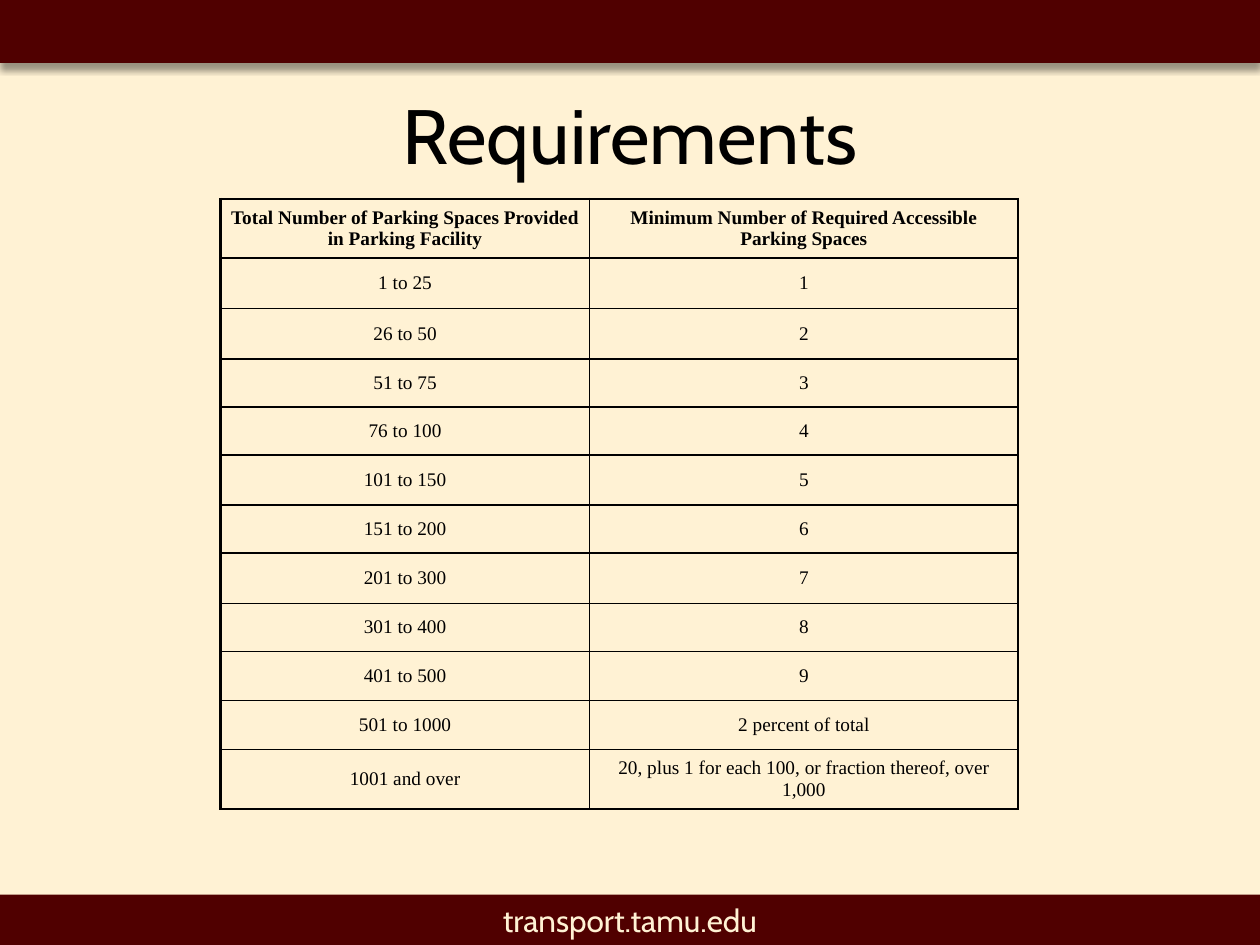
"""Build the accessible parking requirements slide."""
from lxml.etree import SubElement
from pptx import Presentation
from pptx.dml.color import RGBColor
from pptx.enum.shapes import MSO_SHAPE
from pptx.enum.text import MSO_ANCHOR, PP_ALIGN
from pptx.oxml import parse_xml
from pptx.oxml.ns import nsdecls, qn
from pptx.util import Inches, Pt

COLORS = {"maroon": "500000", "cream": "FFF2D4", "black": "000000"}
REQUIREMENTS = [
    ("Total Number of Parking Spaces Provided in Parking Facility",
     "Minimum Number of Required Accessible Parking Spaces"),
    ("1 to 25", "1"),
    ("26 to 50", "2"),
    ("51 to 75", "3"),
    ("76 to 100", "4"),
    ("101 to 150", "5"),
    ("151 to 200", "6"),
    ("201 to 300", "7"),
    ("301 to 400", "8"),
    ("401 to 500", "9"),
    ("501 to 1000", "2 percent of total"),
    ("1001 and over", "20, plus 1 for each 100, or fraction thereof, over 1,000"),
]
COLUMN_WIDTHS = [2.93, 3.4]
ROW_HEIGHTS = [0.47, 0.4, 0.4, 0.38, 0.38, 0.4, 0.38, 0.4, 0.38, 0.39, 0.39, 0.47]


def write(frame, text, font_name, size, color, bold=False):
    frame.text = text
    frame.word_wrap = True
    line = frame.paragraphs[0]
    line.alignment = PP_ALIGN.CENTER
    font = line.runs[0].font
    font.name, font.size, font.bold = font_name, Pt(size), bold
    font.color.rgb = RGBColor.from_string(COLORS[color])


def add_band(top, height):
    band = slide.shapes.add_shape(
        MSO_SHAPE.RECTANGLE, 0, Inches(top), prs.slide_width, Inches(height))
    band.shadow.inherit = False
    band.fill.solid()
    band.fill.fore_color.rgb = RGBColor.from_string(COLORS["maroon"])
    band.line.fill.background()
    return band


prs = Presentation()
prs.slide_width, prs.slide_height = Inches(10), Inches(7.5)
slide = prs.slides.add_slide(prs.slide_layouts[6])
slide.background.fill.solid()
slide.background.fill.fore_color.rgb = RGBColor.from_string(COLORS["cream"])

header = add_band(0, 0.5)
header_effects = header._element.spPr.find(qn("a:effectLst"))
header_shadow = SubElement(
    header_effects, qn("a:outerShdw"), blurRad=str(Pt(4)), dist=str(Pt(3)),
    dir="5400000", rotWithShape="0")
shadow_color = SubElement(header_shadow, qn("a:srgbClr"), val=COLORS["black"])
SubElement(shadow_color, qn("a:alpha"), val="40000")

footer = add_band(7.1, 0.4)
footer.text_frame.vertical_anchor = MSO_ANCHOR.MIDDLE
write(footer.text_frame, "transport.tamu.edu", "Cabin", 18, "cream")

title = slide.shapes.add_textbox(Inches(0.5), Inches(0.58), Inches(9), Inches(0.97))
title.text_frame.vertical_anchor = MSO_ANCHOR.MIDDLE
write(title.text_frame, "Requirements", "Cabin", 44, "black")

last_row, last_column = len(ROW_HEIGHTS) - 1, len(COLUMN_WIDTHS) - 1
requirements = slide.shapes.add_table(
    len(ROW_HEIGHTS), len(COLUMN_WIDTHS), Inches(1.75), Inches(1.58),
    Inches(sum(COLUMN_WIDTHS)), Inches(sum(ROW_HEIGHTS))).table
for column, width in zip(requirements.columns, COLUMN_WIDTHS):
    column.width = Inches(width)
for row, height in zip(requirements.rows, ROW_HEIGHTS):
    row.height = Inches(height)

for r, texts in enumerate(REQUIREMENTS):
    for c, text in enumerate(texts):
        cell = requirements.cell(r, c)
        write(cell.text_frame, text, "Times New Roman", 11, "black", bold=r == 0)
        cell.vertical_anchor = MSO_ANCHOR.MIDDLE
        cell.margin_left = cell.margin_right = Inches(0.07)
        cell.margin_top = cell.margin_bottom = 0
        cell.fill.background()
        heavy_sides = {"L": c == 0, "R": c == last_column,
                       "T": r <= 1, "B": r in (0, last_row)}
        for position, (side, heavy) in enumerate(heavy_sides.items()):
            border = parse_xml(
                f'<a:ln{side} {nsdecls("a")} w="{Pt(1.5 if heavy else 1)}">'
                f'<a:solidFill><a:srgbClr val="{COLORS["black"]}"/></a:solidFill>'
                f'</a:ln{side}>')
            cell._tc.get_or_add_tcPr().insert(position, border)

prs.save("out.pptx")
